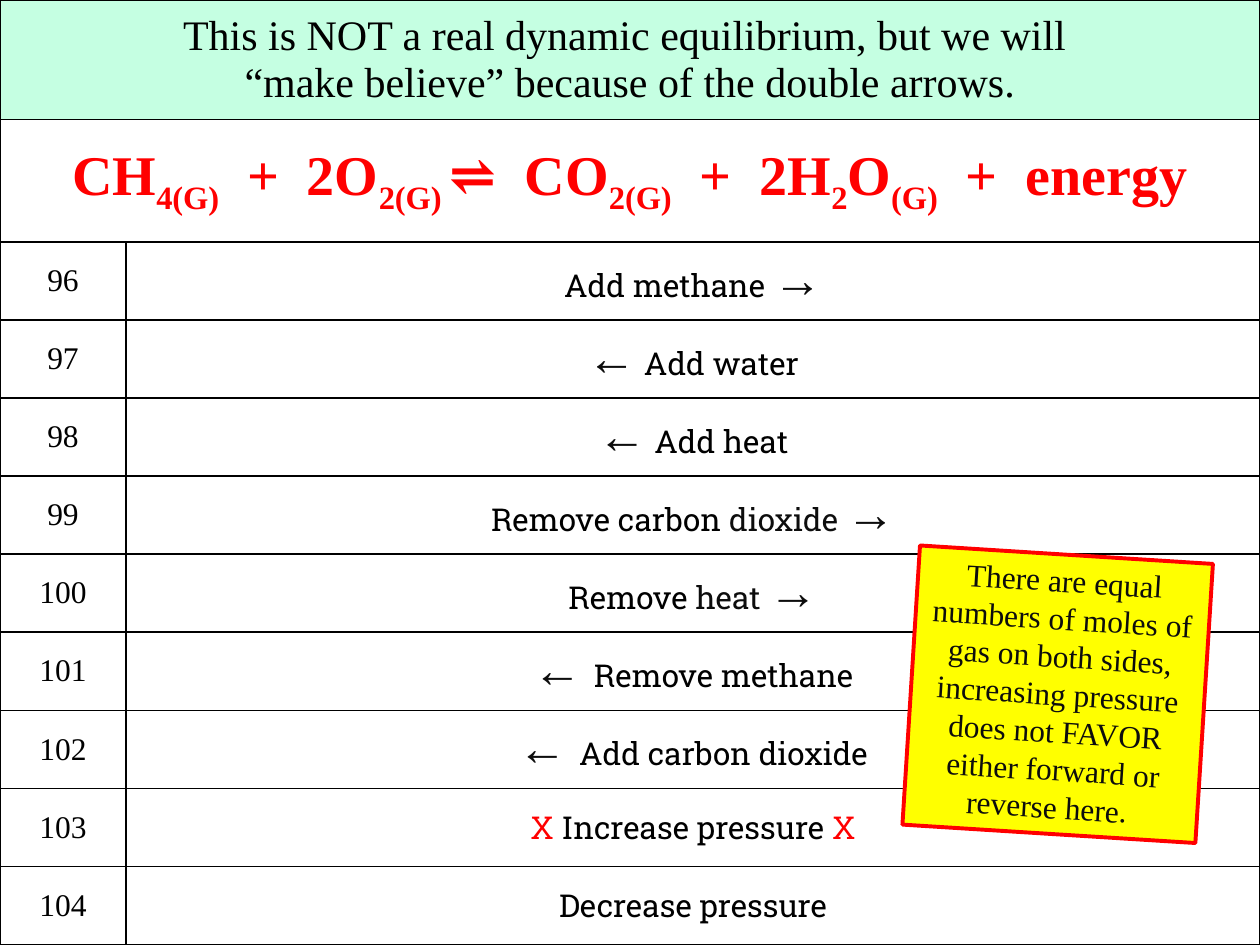
import pptx
import pptx.util
import pptx.dml.color
import pptx.enum.shapes
import pptx.enum.text
import lxml.etree

COLORS = {
    "black": "000000",
    "ink": "0D0D0D",
    "red": "FF0000",
    "yellow": "FFFF00",
    "mint": "C5FFE2",
}
SERIF = "Times New Roman"
SLAB = "Roboto Slab"
SLIDE_WIDTH = pptx.util.Inches(10)
SLIDE_HEIGHT = pptx.util.Inches(7.5)

COLUMN_PARTS = [1, 9]
ROW_PARTS = [0.95, 0.97] + [0.62] * 9
FIRST_NUMBER = 96

TITLE = "This is NOT a real dynamic equilibrium, but we will \v“make believe” because of the double arrows."
EQUATION = [
    ("CH", 0), ("4(G)", -25), ("  +  2O", 0), ("2(G) ", -25), ("⇌  CO", 0), ("2(G)", -25),
    ("  +  2H", 0), ("2", -25), ("O", 0), ("(G)", -25), ("  +  energy", 0),
]
NOTE = (
    "There are equal numbers of moles of gas on both sides, increasing pressure "
    "does not FAVOR either forward or reverse here. "
)

PLAIN = (18, SLAB, "black")
DARK = (18, SLAB, "ink")
CROSS = (18, SLAB, "red")
ARROW = (28, SERIF, "ink")
GAP = (18, SERIF, "ink")
ANSWERS = [
    [("Add methane ", PLAIN), ("→", ARROW)],
    [("←", ARROW), (" ", GAP), ("Add water", PLAIN)],
    [("←", ARROW), (" ", GAP), ("Add heat", PLAIN)],
    [("Remove carbon ", PLAIN), ("dioxide ", DARK), ("→", ARROW)],
    [("Remove ", PLAIN), ("heat ", DARK), ("→", ARROW)],
    [("← ", ARROW), ("Remove methane", PLAIN)],
    [("← ", ARROW), ("Add carbon dioxide", PLAIN)],
    [("X ", CROSS), ("Increase pressure ", PLAIN), ("X", CROSS)],
    [("Decrease pressure", PLAIN)],
]


def rgb(name):
    return pptx.dml.color.RGBColor.from_string(COLORS[name])


def style_run(run, size, font, color, bold=False):
    run.font.size = pptx.util.Pt(size)
    run.font.name = font
    run.font.bold = bold
    run.font.color.rgb = rgb(color)


def write_text(text_frame, text, size, font, color):
    text_frame.text = text
    paragraph = text_frame.paragraphs[0]
    paragraph.alignment = pptx.enum.text.PP_ALIGN.CENTER
    for run in paragraph.runs:
        style_run(run, size, font, color)


def write_pieces(text_frame, pieces):
    paragraph = text_frame.paragraphs[0]
    paragraph.alignment = pptx.enum.text.PP_ALIGN.CENTER
    for text, style in pieces:
        run = paragraph.add_run()
        run.text = text
        style_run(run, *style)
    return paragraph


def set_borders(cell, color, points):
    properties = cell._tc.get_or_add_tcPr()
    namespace = "{http://schemas.openxmlformats.org/drawingml/2006/main}"
    for side in ("lnL", "lnR", "lnT", "lnB"):
        line = lxml.etree.SubElement(properties, namespace + side, w=str(pptx.util.Pt(points)))
        fill = lxml.etree.SubElement(line, namespace + "solidFill")
        lxml.etree.SubElement(fill, namespace + "srgbClr", val=COLORS[color])


def add_question_table(slide, left, top, width, height):
    table = slide.shapes.add_table(
        len(ROW_PARTS), len(COLUMN_PARTS), left, top, width, height
    ).table
    table.first_row = False
    table.horz_banding = False
    for column, part in zip(table.columns, COLUMN_PARTS):
        column.width = int(width * part / sum(COLUMN_PARTS))
    for row, part in zip(table.rows, ROW_PARTS):
        row.height = int(height * part / sum(ROW_PARTS))
    for cell in table.iter_cells():
        set_borders(cell, "black", 1)
        cell.fill.background()
        cell.vertical_anchor = pptx.enum.text.MSO_ANCHOR.MIDDLE

    for row_index in (0, 1):
        table.cell(row_index, 0).merge(table.cell(row_index, 1))
    title_cell = table.cell(0, 0)
    title_cell.fill.solid()
    title_cell.fill.fore_color.rgb = rgb("mint")
    write_text(title_cell.text_frame, TITLE, 24, SERIF, "black")

    equation_style = (32, SERIF, "red", True)
    equation = write_pieces(
        table.cell(1, 0).text_frame, [(text, equation_style) for text, _ in EQUATION]
    )
    for run, (_, baseline) in zip(equation.runs, EQUATION):
        if baseline:
            run._r.get_or_add_rPr().set("baseline", str(baseline * 1000))

    for index, pieces in enumerate(ANSWERS):
        number_cell, answer_cell = table.rows[index + 2].cells
        write_text(number_cell.text_frame, str(FIRST_NUMBER + index), 18, SERIF, "black")
        write_pieces(answer_cell.text_frame, pieces)


def add_note(slide, left, top, width, height):
    note = slide.shapes.add_shape(
        pptx.enum.shapes.MSO_SHAPE.RECTANGLE, left, top, width, height
    )
    note.rotation = 3.6
    note.shadow.inherit = False
    note.fill.solid()
    note.fill.fore_color.rgb = rgb("yellow")
    note.line.color.rgb = rgb("red")
    note.line.width = pptx.util.Pt(2.25)
    text_frame = note.text_frame
    text_frame.word_wrap = True
    text_frame.auto_size = pptx.enum.text.MSO_AUTO_SIZE.SHAPE_TO_FIT_TEXT
    text_frame.vertical_anchor = pptx.enum.text.MSO_ANCHOR.TOP
    write_text(text_frame, NOTE, 18, SERIF, "ink")


def main():
    presentation = pptx.Presentation()
    presentation.slide_width = SLIDE_WIDTH
    presentation.slide_height = SLIDE_HEIGHT
    slide = presentation.slides.add_slide(presentation.slide_layouts[6])
    add_question_table(slide, 0, 0, SLIDE_WIDTH, SLIDE_HEIGHT)
    column = SLIDE_WIDTH / 100
    row = SLIDE_HEIGHT / 75
    add_note(slide, int(72.3 * column), int(44 * row), int(23.3 * column), int(22.2 * row))
    presentation.save("out.pptx")


if __name__ == "__main__":
    main()
